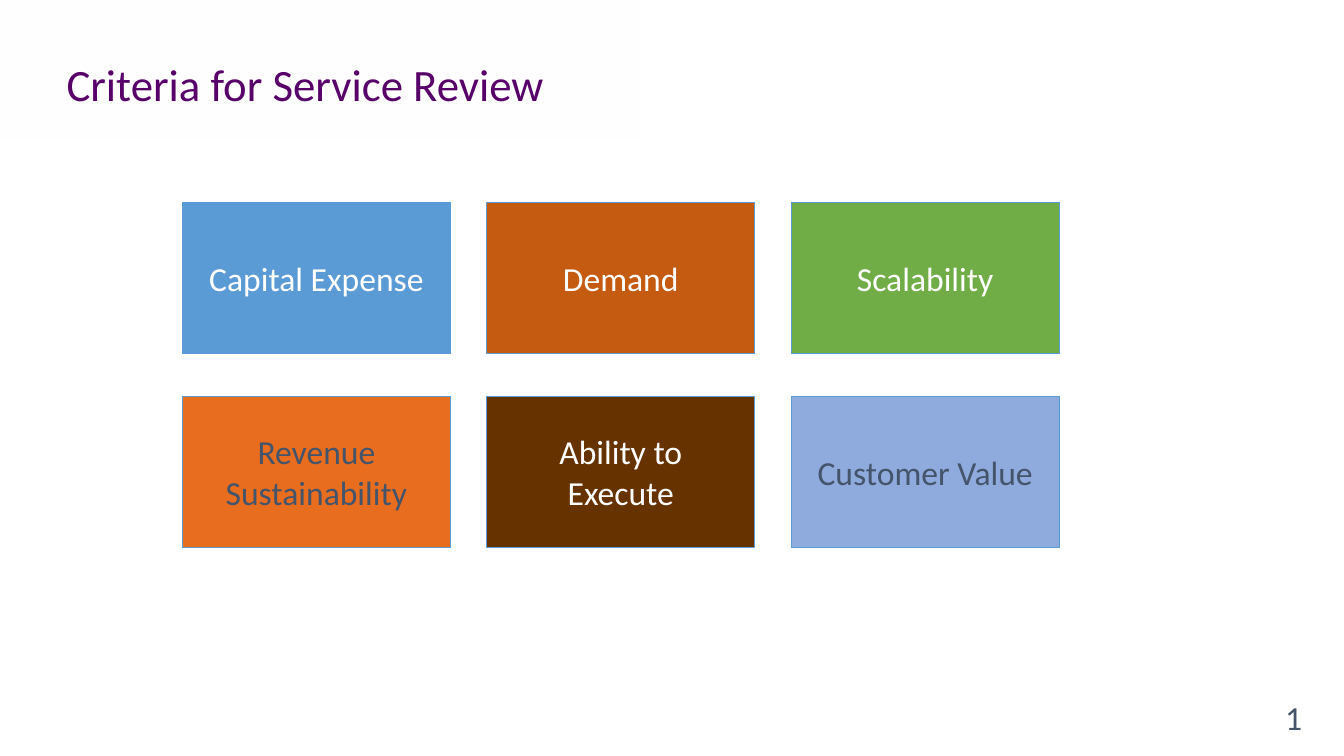
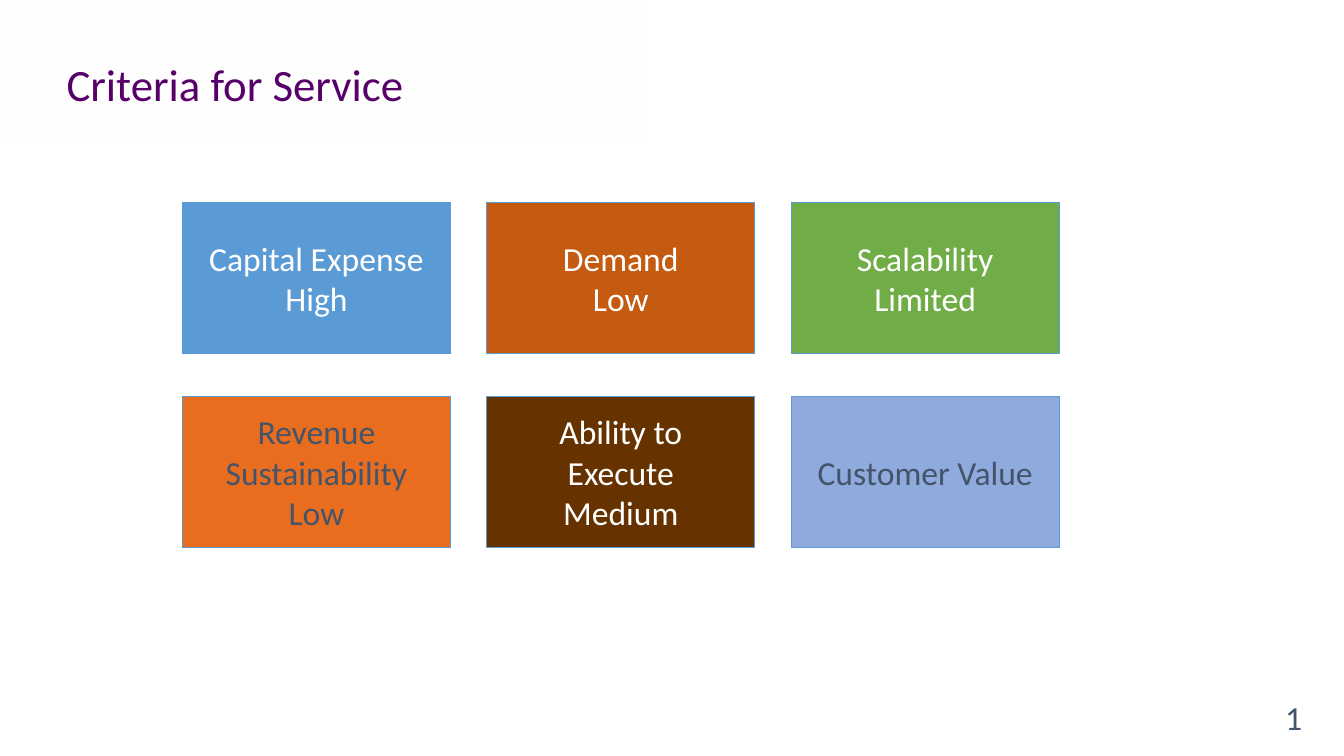
from dataclasses import dataclass

from lxml import etree
from pptx import Presentation
from pptx import util as u
from pptx.dml.color import RGBColor
from pptx.enum import shapes, text
from pptx.oxml.ns import qn
from pptx.slide import Slide

FONT = "Calibri"
PURPLE, SLATE, WHITE, OUTLINE = "580069", "44546A", "FFFFFF", "5B9BD5"

# Grid of criteria, in points
COLUMNS = 3
GRID_LEFT, GRID_TOP = 130.3, 144.7
BOX_WIDTH, BOX_HEIGHT = 191.5, 108
COLUMN_GAP, ROW_GAP = 25.9, 30.2


@dataclass(frozen=True)
class Criterion:
    name: str
    fill: str
    ink: str
    rating: str = ""


@dataclass(frozen=True)
class Review:
    title: str
    rated: bool


CRITERIA = (
    Criterion("Capital Expense", "5B9BD5", WHITE, "High"),
    Criterion("Demand", "C55A11", WHITE, "Low"),
    Criterion("Scalability", "70AD47", WHITE, "Limited"),
    Criterion("Revenue Sustainability", "E86D1F", SLATE, "Low"),
    Criterion("Ability to Execute", "663300", WHITE, "Medium"),
    Criterion("Customer Value", "8FAADC", SLATE),
)
REVIEWS = (
    Review("Criteria for Service Review", rated=False),
    Review("Criteria for Service", rated=True),
)


def color(value: str) -> RGBColor:
    return RGBColor.from_string(value)


def add_span(para, words: str, size: float, ink: str):
    span = para.add_run()
    span.text = words
    span.font.name = FONT
    span.font.size = u.Pt(size)
    span.font.color.rgb = color(ink)
    return span


def set_insets(frame) -> None:
    frame.word_wrap = True
    frame.margin_left = frame.margin_right = u.Pt(14.4)
    frame.margin_top = frame.margin_bottom = u.Pt(11.5)


def add_band(page: Slide) -> None:
    """White band behind the title, fading out to the right."""
    band = page.shapes.add_shape(
        shapes.MSO_SHAPE.RECTANGLE, u.Pt(0), u.Pt(0), u.Pt(460), u.Pt(99.4))
    band.shadow.inherit = False
    band.line.fill.background()
    band.fill.gradient()
    band.fill.gradient_angle = 0
    for stop in band.fill.gradient_stops:
        stop.color.rgb = color(WHITE)
    last_stop = band.element.findall(".//" + qn("a:srgbClr"))[-1]
    etree.SubElement(last_stop, qn("a:alpha")).set("val", "0")
    band.element.getparent().insert(2, band.element)


def add_title(page: Slide, words: str) -> None:
    title = page.shapes.title
    title.left, title.top = u.Pt(40.3), u.Pt(26.6)
    title.width, title.height = u.Pt(594.7), u.Pt(70.6)
    title.text_frame.vertical_anchor = text.MSO_ANCHOR.MIDDLE
    para = title.text_frame.paragraphs[0]
    para.alignment = text.PP_ALIGN.LEFT
    para.line_spacing = 0.9
    add_span(para, words, 32, PURPLE)


def add_criterion(page: Slide, index: int, criterion: Criterion, rated: bool) -> None:
    row, column = divmod(index, COLUMNS)
    box = page.shapes.add_shape(
        shapes.MSO_SHAPE.RECTANGLE,
        u.Pt(GRID_LEFT + column * (BOX_WIDTH + COLUMN_GAP)),
        u.Pt(GRID_TOP + row * (BOX_HEIGHT + ROW_GAP)),
        u.Pt(BOX_WIDTH), u.Pt(BOX_HEIGHT))
    box.shadow.inherit = False
    box.fill.solid()
    box.fill.fore_color.rgb = color(criterion.fill)
    box.line.color.rgb = color(OUTLINE)
    box.line.width = u.Pt(0.5)
    frame = box.text_frame
    set_insets(frame)
    frame.vertical_anchor = text.MSO_ANCHOR.MIDDLE
    para = frame.paragraphs[0]
    para.alignment = text.PP_ALIGN.CENTER
    add_span(para, criterion.name, 24, criterion.ink)
    if rated and criterion.rating:
        para = frame.add_paragraph()
        para.alignment = text.PP_ALIGN.CENTER
        add_span(para, criterion.rating, 24, criterion.ink)


def add_page_number(page: Slide, number: str) -> None:
    box = page.shapes.add_textbox(u.Pt(903.6), u.Pt(486), u.Pt(49.7), u.Pt(42.5))
    set_insets(box.text_frame)
    para = box.text_frame.paragraphs[0]
    para.space_after = u.Pt(6)
    span = add_span(para, number, 24, SLATE)
    span.font._element.set("spc", "-70")


def add_review(deck, review: Review) -> None:
    page = deck.slides.add_slide(deck.slide_layouts[5])
    add_band(page)
    add_title(page, review.title)
    for index, criterion in enumerate(CRITERIA):
        add_criterion(page, index, criterion, review.rated)
    add_page_number(page, "1")


def main() -> None:
    deck = Presentation()
    deck.slide_width, deck.slide_height = u.Pt(960), u.Pt(540)
    for review in REVIEWS:
        add_review(deck, review)
    deck.save("out.pptx")


if __name__ == "__main__":
    main()
